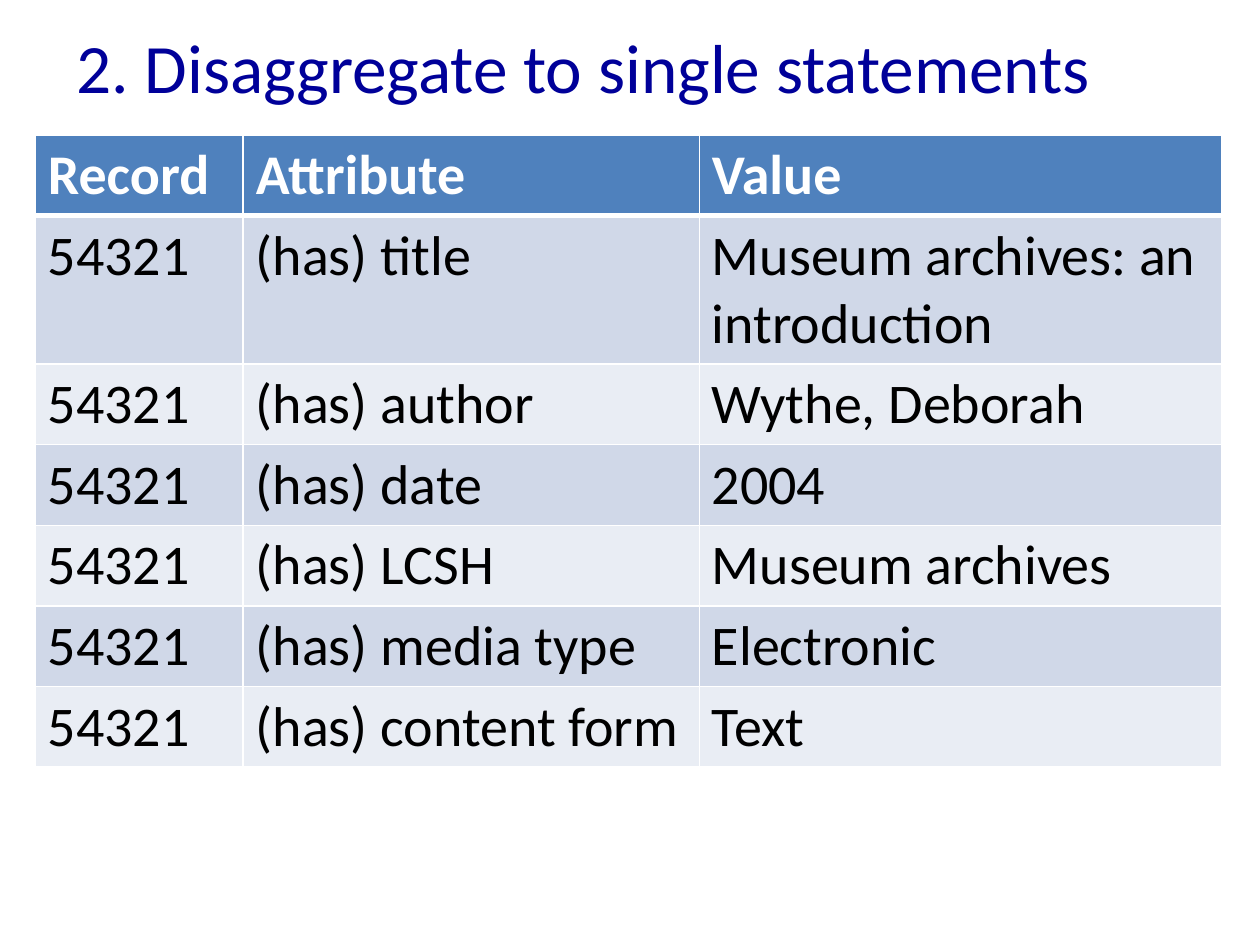
from dataclasses import dataclass

from lxml import etree
from pptx import Presentation
from pptx.dml.color import RGBColor
from pptx.enum.text import MSO_ANCHOR
from pptx.oxml.ns import qn
from pptx.util import Inches, Pt

MIDDLE = MSO_ANCHOR.MIDDLE


@dataclass(frozen=True)
class Theme:
    font: str = "Calibri"
    title_size: float = 39.6
    table_size: float = 32
    title: str = "000099"
    header: str = "4F81BD"
    header_text: str = "FFFFFF"
    body_text: str = "000000"
    bands: tuple = ("D0D8E8", "E9EDF4")
    border: str = "FFFFFF"


THEME = Theme()


def add_text(paragraph, text, size, color, bold=False):
    run = paragraph.add_run()
    run.text = text
    run.font.name = THEME.font
    run.font.size = Pt(size)
    run.font.bold = bold
    run.font.color.rgb = RGBColor.from_string(color)


def add_borders(cell, widths):
    """Draw the cell's borders; widths maps a side (L, R, T, B) to points."""
    properties = cell._tc.get_or_add_tcPr()
    for side, width in widths.items():
        line = etree.SubElement(properties, qn(f"a:ln{side}"), w=str(Pt(width)))
        fill = etree.SubElement(line, qn("a:solidFill"))
        etree.SubElement(fill, qn("a:srgbClr"), val=THEME.border)


presentation = Presentation()
presentation.slide_width = Inches(10)
presentation.slide_height = Inches(7.5)
slide = presentation.slides.add_slide(presentation.slide_layouts[6])

# Title
title = slide.shapes.add_textbox(Inches(0.51), Inches(0.13), Inches(9), Inches(0.79))
title.text_frame.word_wrap = True
title.text_frame.vertical_anchor = MIDDLE
add_text(title.text_frame.paragraphs[0], "2. Disaggregate to single statements",
         THEME.title_size, THEME.title)

# Table of statements
RECORD = "54321"
STATEMENTS = [
    ("title", "Museum archives: an introduction"),
    ("author", "Wythe, Deborah"),
    ("date", "2004"),
    ("LCSH", "Museum archives"),
    ("media type", "Electronic"),
    ("content form", "Text"),
]
rows = [("Record", "Attribute", "Value")]
rows += [(RECORD, f"(has) {attribute}", value) for attribute, value in STATEMENTS]
column_widths = [1.65, 3.62, 4.15]
row_heights = [0.64, 1.18] + [0.64] * (len(rows) - 2)

table = slide.shapes.add_table(
    len(rows), len(column_widths), Inches(0.28), Inches(1.07),
    Inches(sum(column_widths)), Inches(sum(row_heights))).table
for column, width in zip(table.columns, column_widths):
    column.width = Inches(width)

for row_index, values in enumerate(rows):
    table.rows[row_index].height = Inches(row_heights[row_index])
    is_header = row_index == 0
    fill_color = THEME.header if is_header else THEME.bands[(row_index - 1) % 2]
    text_color = THEME.header_text if is_header else THEME.body_text
    borders = {"L": 1, "R": 1, "T": 3 if row_index == 1 else 1, "B": 3 if is_header else 1}
    for column_index, value in enumerate(values):
        cell = table.cell(row_index, column_index)
        add_borders(cell, borders)
        cell.fill.solid()
        cell.fill.fore_color.rgb = RGBColor.from_string(fill_color)
        add_text(cell.text_frame.paragraphs[0], value, THEME.table_size, text_color, is_header)

presentation.save("out.pptx")
